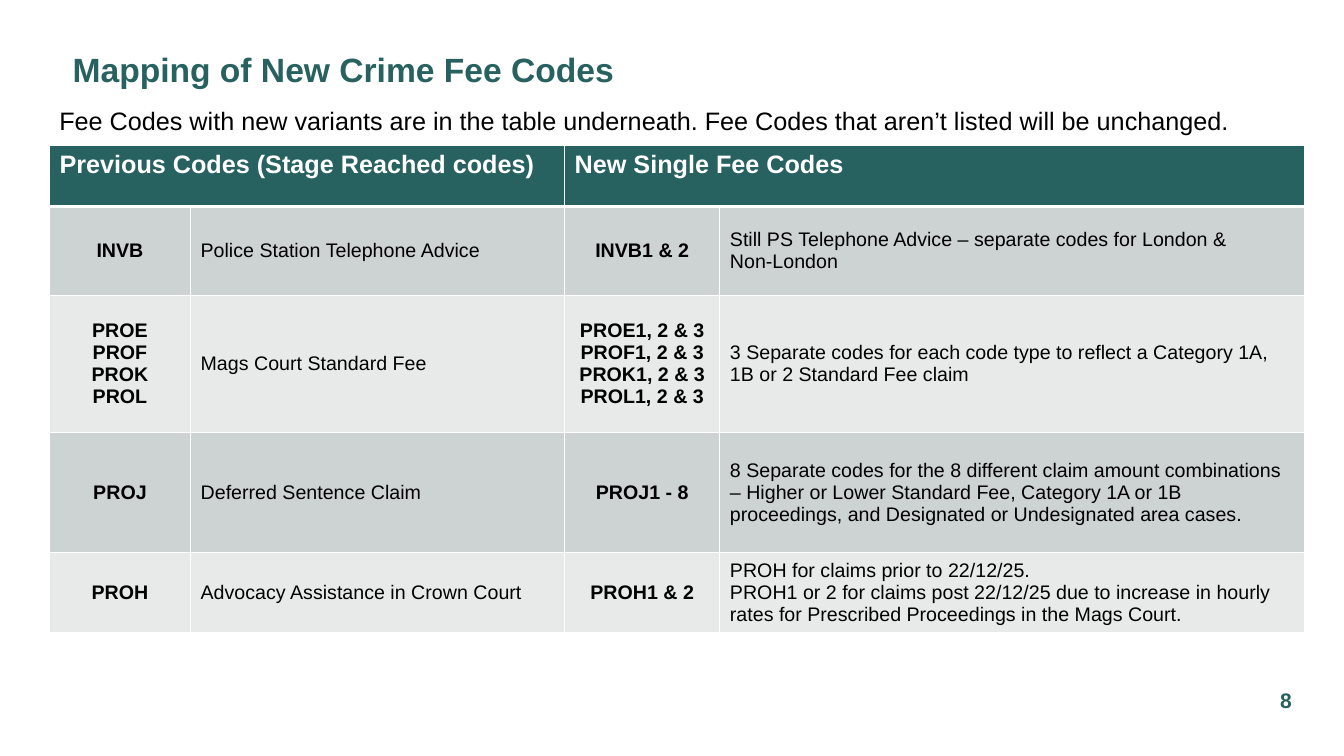
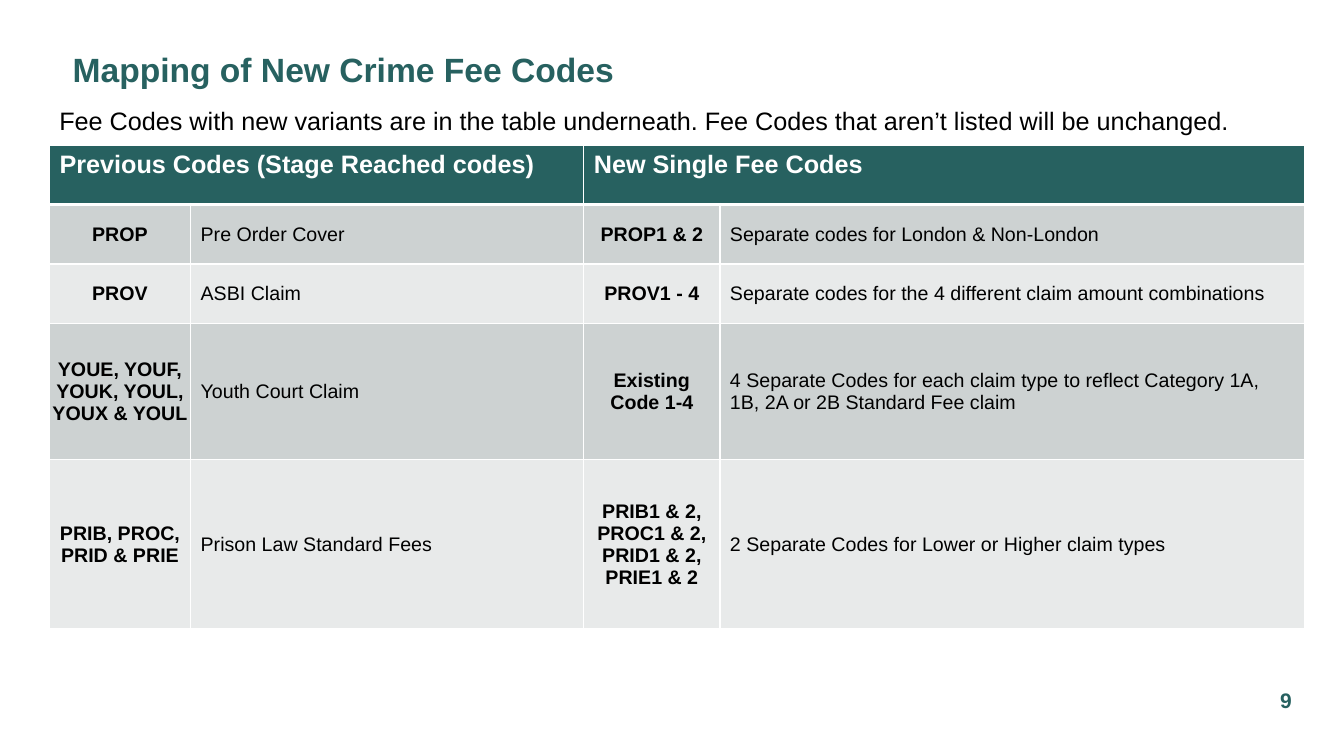
import pptx
import pptx.dml.color
import pptx.enum.text
import pptx.oxml
import pptx.oxml.ns
import pptx.util

Inches = pptx.util.Inches
Pt = pptx.util.Pt
RGBColor = pptx.dml.color.RGBColor
ALIGN = pptx.enum.text.PP_ALIGN
ANCHOR = pptx.enum.text.MSO_ANCHOR

TEAL = RGBColor(0x27, 0x61, 0x60)
WHITE = RGBColor(0xFF, 0xFF, 0xFF)
BLACK = RGBColor(0x00, 0x00, 0x00)
ROW_FILLS = (RGBColor(0xCD, 0xD2, 0xD2), RGBColor(0xE8, 0xEA, 0xEA))

TITLE_FONT = {"name": "Arial", "size": Pt(24), "bold": True}
NUMBER_FONT = {"name": "Arial", "size": Pt(15), "bold": True}
INTRO_FONT = {"name": "Arial", "size": Pt(18), "bold": False}
HEADER_FONT = {"name": "Arial", "size": Pt(18), "bold": True}
CODE_FONT = {"name": "Arial", "size": Pt(14), "bold": True}
DETAIL_FONT = {"name": "Arial", "size": Pt(14), "bold": False}

NO_MARGINS = {"margin_left": 0, "margin_top": 0, "margin_right": 0, "margin_bottom": 0}

TITLE = "Mapping of New Crime Fee Codes"
INTRO = ("Fee Codes with new variants are in the table underneath. "
         "Fee Codes that aren’t listed will be unchanged.")
HEADERS = ("Previous Codes (Stage Reached codes)", "New Single Fee Codes")

# Within a cell, \n starts a paragraph and \v breaks a line.
PAGES = [
    {
        "number": "8",
        "columns": (1.4, 3.71, 1.54, 5.8),
        "heights": (0.61, 0.88, 1.36, 1.19, 0.8),
        "rows": [
            ("INVB", "Police Station Telephone Advice", "INVB1 & 2",
             "Still PS Telephone Advice – separate codes for London &\vNon-London"),
            ("PROE\nPROF\nPROK\nPROL", "Mags Court Standard Fee",
             "PROE1, 2 & 3\nPROF1, 2 & 3\nPROK1, 2 & 3\nPROL1, 2 & 3",
             "3 Separate codes for each code type to reflect a Category 1A, "
             "1B or 2 Standard Fee claim"),
            ("PROJ", "Deferred Sentence Claim", "PROJ1 - 8",
             "8 Separate codes for the 8 different claim amount combinations – "
             "Higher or Lower Standard Fee, Category 1A or 1B proceedings, "
             "and Designated or Undesignated area cases."),
            ("PROH", "Advocacy Assistance in Crown Court", "PROH1 & 2",
             "PROH for claims prior to 22/12/25.\n"
             "PROH1 or 2 for claims post 22/12/25 due to increase in hourly "
             "rates for Prescribed Proceedings in the Mags Court."),
        ],
    },
    {
        "number": "9",
        "columns": (1.4, 3.9, 1.35, 5.8),
        "heights": (0.59, 0.59, 0.59, 1.35, 1.68),
        "rows": [
            ("PROP", "Pre Order Cover", "PROP1 & 2",
             "Separate codes for London & Non-London"),
            ("PROV", "ASBI Claim", "PROV1 - 4",
             "Separate codes for the 4 different claim amount combinations"),
            ("YOUE, YOUF, YOUK, YOUL, YOUX & YOUL", "Youth Court Claim",
             "Existing\nCode 1-4",
             "4 Separate Codes for each claim type to reflect Category 1A, "
             "1B, 2A or 2B Standard Fee claim"),
            ("PRIB, PROC, PRID & PRIE", "Prison Law Standard Fees",
             "PRIB1 & 2, PROC1 & 2,\nPRID1 & 2, PRIE1 & 2",
             "2 Separate Codes for Lower or Higher claim types"),
        ],
    },
]


def set_attributes(target, values):
    for name, value in values.items():
        setattr(target, name, value)


def write_text(frame, text, font, color, align=ALIGN.LEFT):
    frame.text = text
    for para in frame.paragraphs:
        para.alignment = align
        for span in para.runs:
            set_attributes(span.font, font)
            span.font.color.rgb = color


def add_text(page, place, text, font, color, align=ALIGN.LEFT, frame_format=None):
    box = page.shapes.add_textbox(*map(Inches, place))
    box.text_frame.word_wrap = True
    set_attributes(box.text_frame, frame_format or {})
    write_text(box.text_frame, text, font, color, align)


def add_borders(cell, top, bottom):
    """Draw white borders; must run before the cell is filled."""
    properties = cell._tc.get_or_add_tcPr()
    for side, points in (("L", 1), ("R", 1), ("T", top), ("B", bottom)):
        properties.append(pptx.oxml.parse_xml(
            f'<a:ln{side} {pptx.oxml.ns.nsdecls("a")} w="{Pt(points)}">'
            f'<a:solidFill><a:srgbClr val="{WHITE}"/></a:solidFill></a:ln{side}>'))


def paint_cell(cell, color, top=1, bottom=1):
    add_borders(cell, top, bottom)
    cell.fill.solid()
    cell.fill.fore_color.rgb = color


def add_fee_table(page, columns, heights, rows):
    frame = page.shapes.add_table(
        len(heights), len(columns), Inches(0.49), Inches(1.44),
        Inches(sum(columns)), Inches(sum(heights)))
    table = frame.table
    for column, width in zip(table.columns, columns):
        column.width = Inches(width)
    for row, height in zip(table.rows, heights):
        row.height = Inches(height)

    for cell in table.rows[0].cells:
        paint_cell(cell, TEAL, bottom=3)
    for index, header in enumerate(HEADERS):
        cell = table.cell(0, 2 * index)
        cell.merge(table.cell(0, 2 * index + 1))
        write_text(cell.text_frame, header, HEADER_FONT, WHITE)

    for row_index, texts in enumerate(rows, start=1):
        for column_index, text in enumerate(texts):
            cell = table.cell(row_index, column_index)
            paint_cell(cell, ROW_FILLS[(row_index - 1) % 2],
                       top=3 if row_index == 1 else 1)
            cell.vertical_anchor = ANCHOR.MIDDLE
            if column_index % 2 == 0:
                set_attributes(cell, NO_MARGINS)
                write_text(cell.text_frame, text, CODE_FONT, BLACK, ALIGN.CENTER)
            else:
                write_text(cell.text_frame, text, DETAIL_FONT, BLACK)


def add_page(deck, number, columns, heights, rows):
    page = deck.slides.add_slide(deck.slide_layouts[6])
    centred = {**NO_MARGINS, "vertical_anchor": ANCHOR.MIDDLE}
    add_text(page, (0.72, 0.19, 11.73, 0.98), TITLE, TITLE_FONT, TEAL,
             frame_format=centred)
    add_text(page, (12.51, 6.75, 0.49, 0.4), number, NUMBER_FONT, TEAL,
             ALIGN.CENTER, centred)
    add_text(page, (0.49, 1, 12.23, 0.4), INTRO, INTRO_FONT, BLACK,
             frame_format={"auto_size": pptx.enum.text.MSO_AUTO_SIZE.SHAPE_TO_FIT_TEXT})
    add_fee_table(page, columns, heights, rows)


def main():
    deck = pptx.Presentation()
    deck.slide_width = Inches(13.33)
    deck.slide_height = Inches(7.5)
    for content in PAGES:
        add_page(deck, **content)
    deck.save("out.pptx")


if __name__ == "__main__":
    main()
